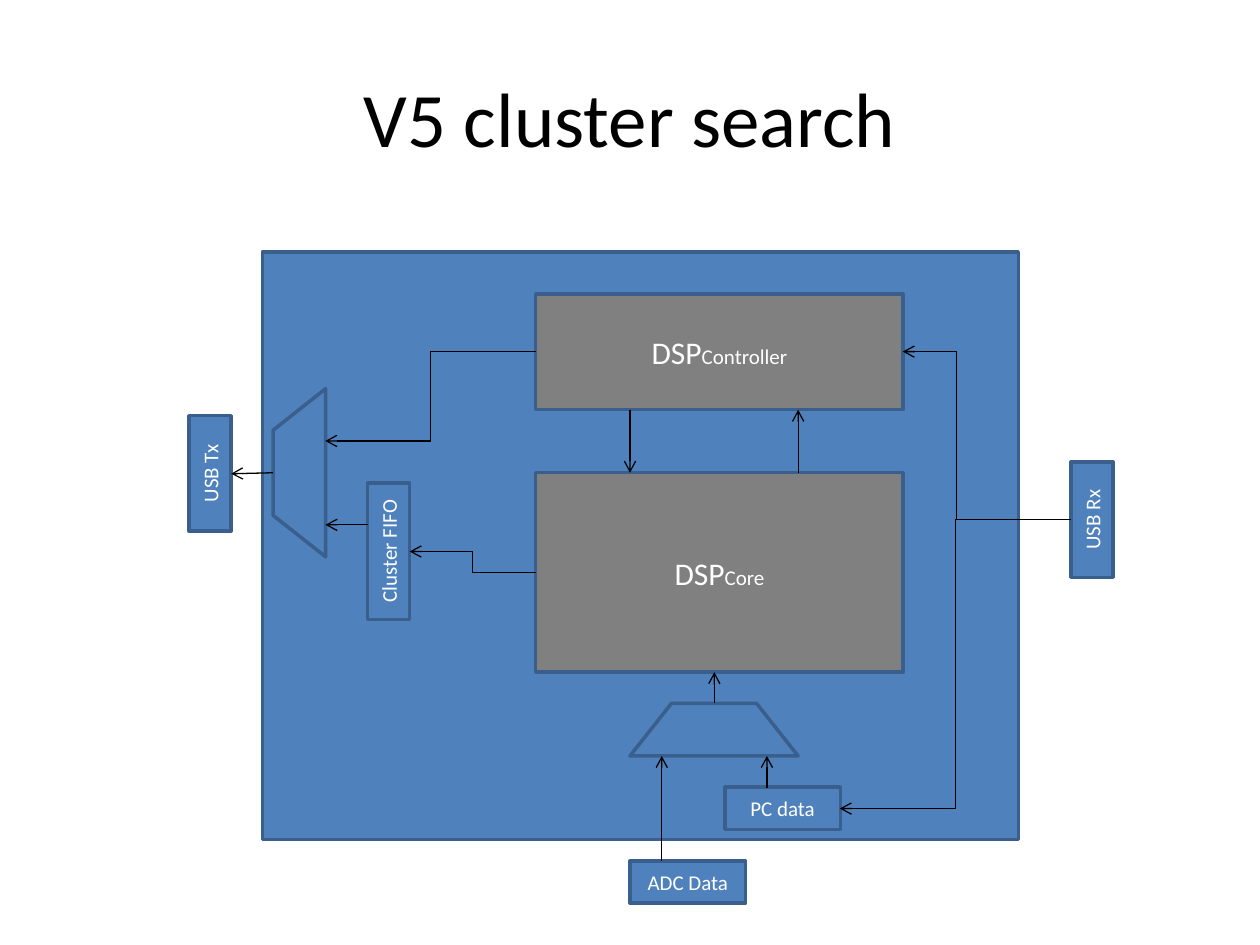
from lxml import etree
from pptx import Presentation
from pptx.dml.color import RGBColor
from pptx.enum.shapes import MSO_CONNECTOR, MSO_SHAPE
from pptx.enum.text import MSO_ANCHOR, PP_ALIGN
from pptx.oxml.ns import qn
from pptx.util import Cm, Pt

RECTANGLE = MSO_SHAPE.RECTANGLE
TRAPEZOID = MSO_SHAPE.TRAPEZOID
STRAIGHT = MSO_CONNECTOR.STRAIGHT
ELBOW = MSO_CONNECTOR.ELBOW
CENTER = PP_ALIGN.CENTER
MIDDLE = MSO_ANCHOR.MIDDLE

FONT = "Calibri"
BLUE, BORDER, GRAY = "4F81BD", "3A5F8C", "808080"
WHITE, BLACK = "FFFFFF", "000000"
PORT_SIZE = (0.85, 2.33)
MUX_SIZE = (3.39, 1.06)
DSP_LEFT, DSP_WIDTH = 10.8, 7.41


def color(value):
    """Return the colour for a hex string."""
    return RGBColor.from_string(value)


def style_paragraph(paragraph, size, font_color):
    """Centre a paragraph and set its font."""
    paragraph.alignment = CENTER
    paragraph.font.name = FONT
    paragraph.font.size = Pt(size)
    paragraph.font.color.rgb = color(font_color)


def set_title(slide, text):
    """Fill and place the title placeholder."""
    title = slide.shapes.title
    title.left, title.top, title.width, title.height = map(Cm, (1.27, 0.76, 22.86, 3.18))
    title.text_frame.text = text
    title.text_frame.vertical_anchor = MIDDLE
    style_paragraph(title.text_frame.paragraphs[0], 44, BLACK)


def add_block(slide, left, top, width, height, fill=BLUE, kind=RECTANGLE):
    """Add a filled and outlined shape."""
    shape = slide.shapes.add_shape(kind, Cm(left), Cm(top), Cm(width), Cm(height))
    shape.shadow.inherit = False
    shape.fill.solid()
    shape.fill.fore_color.rgb = color(fill)
    shape.line.color.rgb = color(BORDER)
    shape.line.width = Pt(2)
    return shape


def add_port(slide, text, left, top, size=PORT_SIZE, rotation=0):
    """Add a narrow box whose label runs upwards along it."""
    shape = add_block(slide, left, top, *size)
    shape.rotation = rotation
    shape.text_frame.vertical_anchor = MIDDLE
    shape.element.txBody.bodyPr.set("vert", "vert270")
    paragraph = shape.text_frame.paragraphs[0]
    paragraph.text = text
    style_paragraph(paragraph, 12, WHITE)


def add_dsp(slide, part, top, height):
    """Add a gray DSP block with its part name in smaller type."""
    shape = add_block(slide, DSP_LEFT, top, DSP_WIDTH, height, GRAY)
    shape.text_frame.vertical_anchor = MIDDLE
    paragraph = shape.text_frame.paragraphs[0]
    style_paragraph(paragraph, 18, WHITE)
    paragraph.add_run().text = "DSP"
    part_run = paragraph.add_run()
    part_run.text = part
    part_run.font.size = Pt(12)


def add_multiplexer(slide, left, top, rotation=0):
    """Add a trapezoid multiplexer."""
    shape = add_block(slide, left, top, *MUX_SIZE, kind=TRAPEZOID)
    shape.adjustments[0] = 0.79
    shape.rotation = rotation


def add_arrow(slide, start, end, kind=STRAIGHT, bend=None):
    """Add a black arrow, with an optional position for its bend."""
    connector = slide.shapes.add_connector(kind, *map(Cm, (*start, *end)))
    connector.line.color.rgb = color(BLACK)
    connector.line.width = Pt(0.75)
    properties = connector.element.spPr
    line = properties.find(qn("a:ln"))
    etree.SubElement(line, qn("a:tailEnd"), type="arrow")
    etree.SubElement(properties, qn("a:effectLst"))
    if bend is not None:
        guides = properties.find(qn("a:prstGeom")).find(qn("a:avLst"))
        formula = f"val {round(bend * 100000)}"
        etree.SubElement(guides, qn("a:gd"), name="adj1", fmla=formula)


def main():
    """Build the cluster search diagram."""
    presentation = Presentation()
    presentation.slide_width, presentation.slide_height = Cm(25.4), Cm(19.05)
    slide = presentation.slides.add_slide(presentation.slide_layouts[5])
    add_block(slide, 5.29, 5.08, 15.24, 11.85)
    set_title(slide, "V5 cluster search")

    add_dsp(slide, "Core", 9.53, 4.02)
    add_dsp(slide, "Controller", 5.93, 2.33)
    add_port(slide, "USB Rx", 21.59, 9.31)
    add_port(slide, "USB Tx", 3.81, 8.38)
    add_port(slide, "Cluster FIFO", 7.41, 9.74, size=(0.85, 2.75))
    add_port(slide, "ADC Data", 13.44, 16.62, rotation=90)
    add_port(slide, "PC data", 15.35, 15.13, rotation=90)
    add_multiplexer(slide, 12.7, 14.18)
    add_multiplexer(slide, 4.34, 9, rotation=270)

    straight_arrows = [
        ((12.7, 8.26), (12.7, 9.53)),
        ((16.09, 9.53), (16.09, 8.26)),
        ((14.4, 14.18), (14.4, 13.55)),
        ((13.34, 17.36), (13.34, 15.24)),
        ((15.46, 15.88), (15.46, 15.24)),
        ((7.41, 10.58), (6.56, 10.58)),
        ((5.5, 9.53), (4.66, 9.55)),
    ]
    for start, end in straight_arrows:
        add_arrow(slide, start, end)

    usb_rx = (21.59, 10.48)
    elbow_arrows = [
        ((DSP_LEFT, 11.54), (8.26, 11.12), 0.5),
        ((DSP_LEFT, 7.09), (6.56, 8.89), 0.5),
        (usb_rx, (16.93, 16.3), 0.5),
        (usb_rx, (18.2, 7.09), 0.68),
    ]
    for start, end, bend in elbow_arrows:
        add_arrow(slide, start, end, ELBOW, bend)

    presentation.save("out.pptx")


if __name__ == "__main__":
    main()
